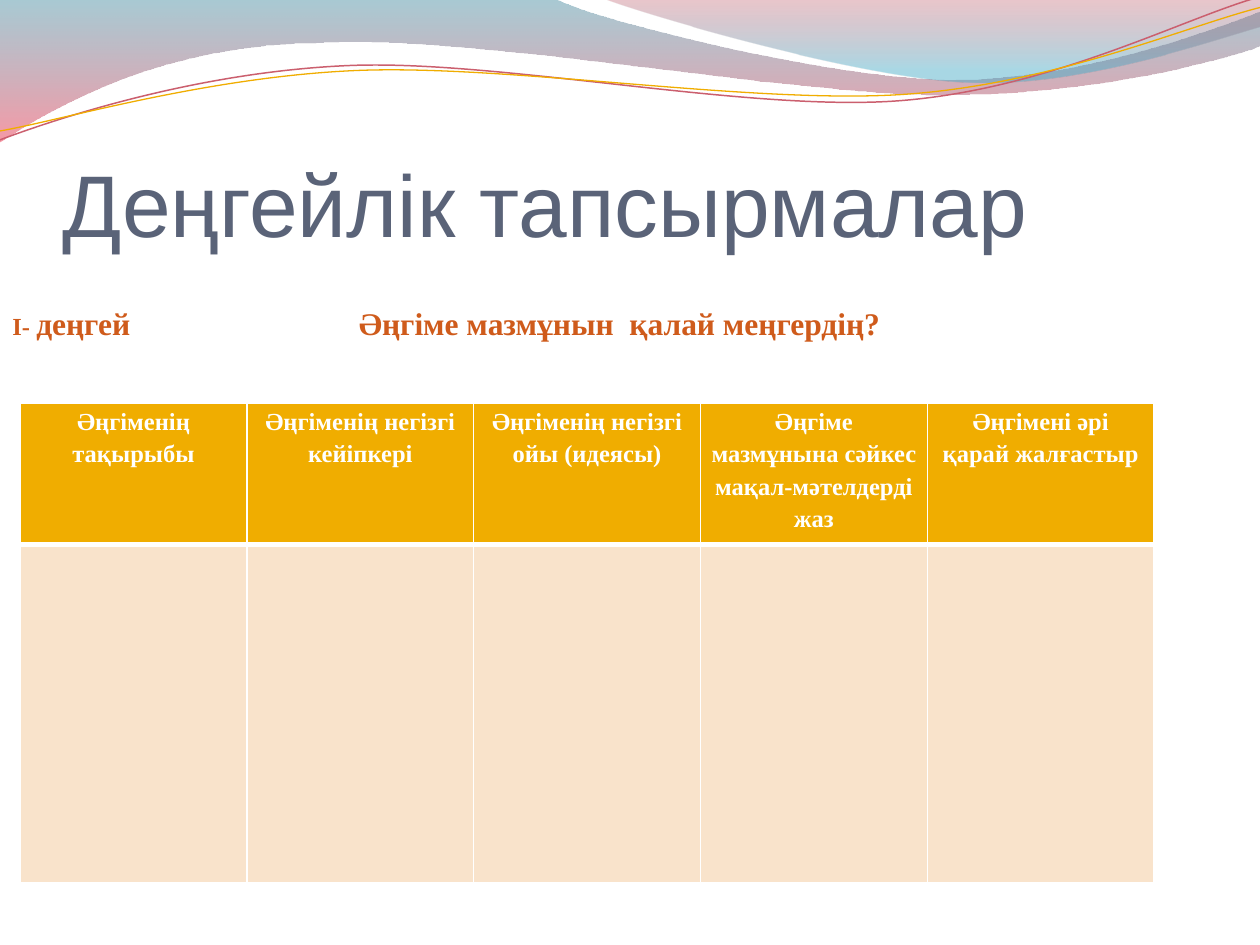
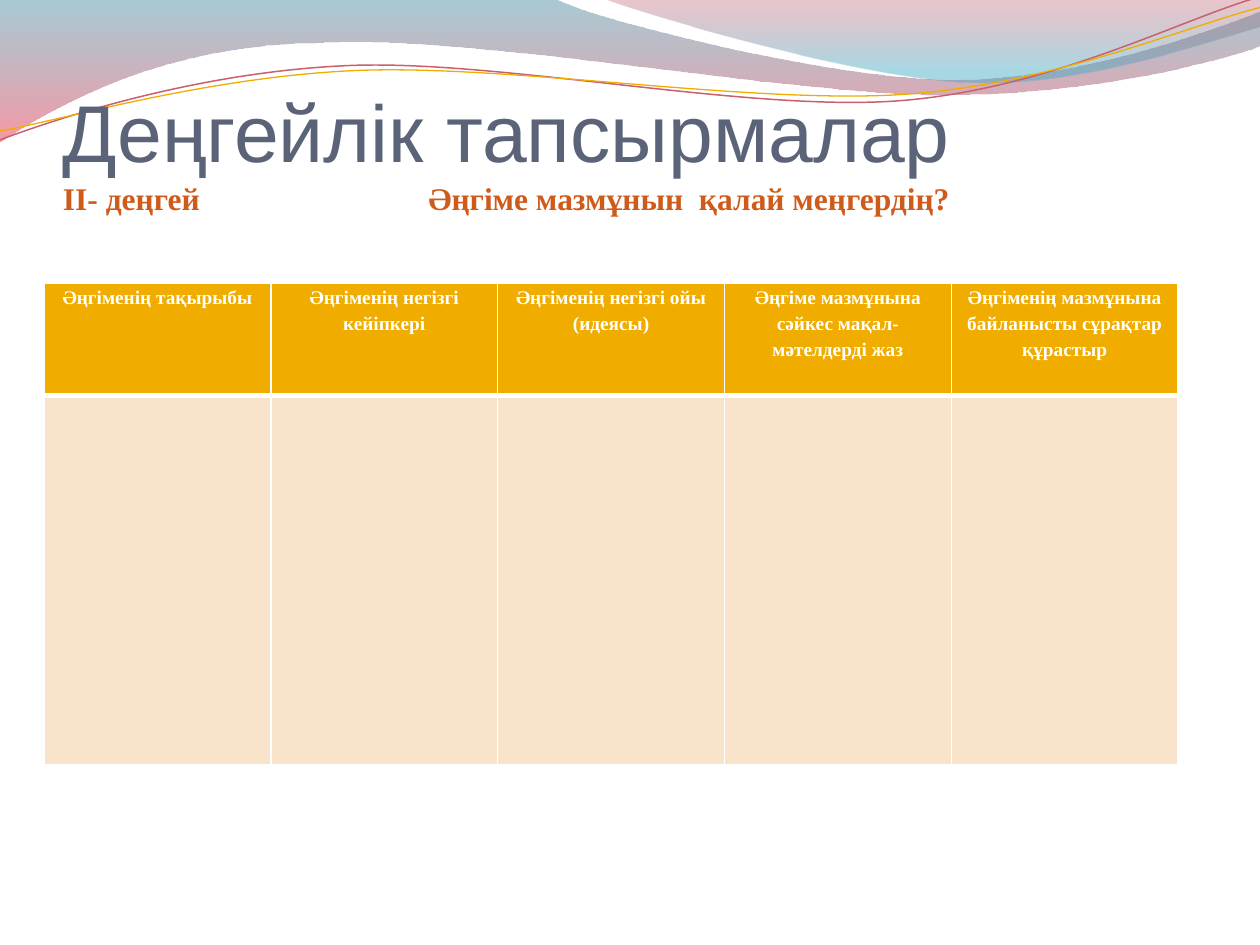
from math import cos, radians, sin

from lxml.etree import SubElement
from pptx import Presentation
from pptx.dml.color import RGBColor
from pptx.enum.text import MSO_ANCHOR, PP_ALIGN
from pptx.oxml.ns import qn
from pptx.util import Inches, Pt

COLORS = {
    "title": "5A6378",
    "level": "CF5B1B",
    "header": "F0AD00",
    "body": "F9E3CB",
    "white": "FFFFFF",
    "teal": "3F8A9F",
    "pink": "EF445B",
    "red": "B84253",
    "sky": "42ABC7",
    "rose": "CB5F6E",
}
SANS, SERIF = "Arial", "Times New Roman"
TITLE = "Деңгейлік тапсырмалар"
QUESTION = "Әңгіме мазмұнын  қалай меңгердің?"
TITLE_BOX = (0.5, 0.77, 9, 1.25)
TABLE_SIZE = (9, 3.81)
HEADERS = [
    "Әңгіменің тақырыбы",
    "Әңгіменің негізгі кейіпкері",
    "Әңгіменің негізгі ойы (идеясы)",
    "Әңгіме мазмұнына сәйкес мақал-мәтелдерді жаз",
]
LINE_TILT = -2.7

LEFT_WAVE = [
    [(0, -0.01)], [(4.4, -0.01)],
    [(4.76, 0.17), (6.64, 0.63), (7.58, 0.63)],
    [(8.53, 0.63), (9.58, 0.26), (10, 0.09)],
    [(10.01, 0.36)],
    [(9.83, 0.44), (8.7, 0.76), (7.46, 0.75)],
    [(6.22, 0.75), (3.82, 0.28), (2.57, 0.34)],
    [(1.29, 0.35), (0.46, 0.83), (-0.01, 1.13)],
    [(0, -0.01)],
]
RIGHT_WAVE = [
    [(4.79, -0.01)],
    [(5.09, 0.11), (6.82, 0.62), (7.69, 0.65)],
    [(8.56, 0.69), (9.61, 0.32), (10, 0.21)],
    [(10, 0)], [(4.79, -0.01)],
]
ROSE_LINE = [
    [(0, 1.11)],
    [(0.48, 0.93), (1.58, 0.57), (2.77, 0.52)],
    [(3.95, 0.47), (5.93, 0.89), (7.13, 0.8)],
    [(8.33, 0.71), (9.38, 0.15), (9.98, -0.02)],
]
GOLD_LINE = [
    [(0, 1.04)],
    [(0.47, 0.96), (1.64, 0.61), (2.83, 0.56)],
    [(4.03, 0.51), (5.97, 0.83), (7.17, 0.75)],
    [(8.36, 0.67), (9.41, 0.21), (10, 0.06)],
]


def rgb(name):
    return RGBColor.from_string(COLORS[name])


def add_outline(s, outline, close):
    points = [(Inches(x), Inches(y)) for step in outline for x, y in step]
    builder = s.shapes.build_freeform(*points[0])
    builder.add_line_segments(points[1:], close=close)
    sp = builder.convert_to_shape()
    sp.shadow.inherit = False
    segments = iter(list(sp._element.iter(qn("a:lnTo"))))
    for step in outline[1:]:
        first, *others = [next(segments) for _ in step]
        if others:
            first.tag = qn("a:cubicBezTo")
            for other in others:
                first.append(other[0])
                other.getparent().remove(other)
    return sp


def add_wave(s, outline, stops):
    sp = add_outline(s, outline, True)
    sp.line.fill.background()
    sp.fill.gradient()
    sp.fill.gradient_angle = 270
    for stop, (position, color, _) in zip(sp.fill.gradient_stops, stops):
        stop.position = position
        stop.color.rgb = rgb(color)
    for clr, (_, _, opacity) in zip(sp._element.spPr.iter(qn("a:srgbClr")), stops):
        SubElement(clr, qn("a:alpha"), val=str(opacity * 1000))


def rotate(point, center, degrees):
    dx, dy = point[0] - center[0], point[1] - center[1]
    c, d = cos(radians(degrees)), sin(radians(degrees))
    return center[0] + dx * c - dy * d, center[1] + dx * d + dy * c


def add_wave_line(s, outline, center, color, width):
    level = [[rotate(point, center, -LINE_TILT) for point in step] for step in outline]
    sp = add_outline(s, level, False)
    sp.rotation = LINE_TILT
    sp.fill.background()
    sp.line.color.rgb = rgb(color)
    sp.line.width = Pt(width)


def add_waves(s):
    add_wave(s, LEFT_WAVE, [(0, "teal", 45), (1, "pink", 55)])
    add_wave(s, RIGHT_WAVE, [(0, "red", 30), (0.8, "sky", 45)])
    add_wave_line(s, ROSE_LINE, (4.99, 0.58), "rose", 0.85)
    add_wave_line(s, GOLD_LINE, (5, 0.59), "header", 0.75)


def set_font(font, name, size, color, bold=False):
    font.name = name
    font.size = Pt(size)
    font.bold = bold
    font.color.rgb = rgb(color)


def add_text_box(s, box, left=0, bottom=0):
    tf = s.shapes.add_textbox(*map(Inches, box)).text_frame
    tf.word_wrap = True
    tf.vertical_anchor = MSO_ANCHOR.BOTTOM
    tf.margin_left, tf.margin_bottom = Inches(left), Inches(bottom)
    tf.margin_top, tf.margin_right = Inches(0.05), 0
    return tf


def write_title(p, size):
    p.text = TITLE
    set_font(p.font, SANS, size, "title")


def write_level(p, number, number_size, tab):
    set_font(p.font, SERIF, 18, "level", True)
    pPr = p._p.get_or_add_pPr()
    tab_list = pPr.makeelement(qn("a:tabLst"))
    SubElement(tab_list, qn("a:tab"), pos=str(Inches(tab)), algn="l")
    pPr.insert(0, tab_list)
    r = p.add_run()
    r.text = f"{number}- "
    r.font.size = Pt(number_size)
    r = p.add_run()
    r.text = f"деңгей\t{QUESTION}"


def set_borders(cell, top, bottom):
    tcPr = cell._tc.get_or_add_tcPr()
    for side, width in zip("LRTB", (1, 1, top, bottom)):
        ln = SubElement(tcPr, qn(f"a:ln{side}"), w=str(Pt(width)))
        fill = SubElement(ln, qn("a:solidFill"))
        SubElement(fill, qn("a:srgbClr"), val=COLORS["white"])


def add_task_table(s, left, top, row_heights, headers, size):
    width, height = map(Inches, TABLE_SIZE)
    frame = s.shapes.add_table(
        2, len(headers), Inches(left), Inches(top), width, height
    )
    table = frame.table
    for row, row_height in zip(table.rows, row_heights):
        row.height = Inches(row_height)
    frame.height = height
    for col, header in enumerate(headers):
        for row, (color, borders) in enumerate([("header", (1, 3)), ("body", (3, 1))]):
            cell = table.cell(row, col)
            set_borders(cell, *borders)
            cell.fill.solid()
            cell.fill.fore_color.rgb = rgb(color)
            cell.margin_left = cell.margin_right = Inches(0.08)
            cell.margin_top = cell.margin_bottom = 0
        p = table.cell(0, col).text_frame.paragraphs[0]
        p.text = header
        p.alignment = PP_ALIGN.CENTER
        p.line_spacing = 1.2
        set_font(p.font, SERIF, size, "white", True)


def add_first_level(s):
    write_title(add_text_box(s, TITLE_BOX).paragraphs[0], 50)
    add_task_table(
        s, 0.16, 3.2, (0.57, 2.69), HEADERS + ["Әңгімені әрі қарай жалғастыр"], 14
    )
    tf = add_text_box(s, (0, 0.34, 7.1, 2.43), left=0.1, bottom=0.06)
    write_level(tf.paragraphs[0], "І", 14, 2.75)


def add_second_level(s):
    tf = add_text_box(s, TITLE_BOX, bottom=0.3)
    write_title(tf.paragraphs[0], 46)
    write_level(tf.add_paragraph(), "ІІ", 18, 2.9)
    add_task_table(
        s, 0.35, 2.25, (0.89, 2.93),
        HEADERS + ["Әңгіменің мазмұнына байланысты сұрақтар құрастыр"], 11,
    )


def main():
    prs = Presentation()
    prs.slide_width, prs.slide_height = Inches(10), Inches(7.5)
    for add_content in (add_first_level, add_second_level):
        s = prs.slides.add_slide(prs.slide_layouts[6])
        add_waves(s)
        add_content(s)
    prs.save("out.pptx")


if __name__ == "__main__":
    main()
